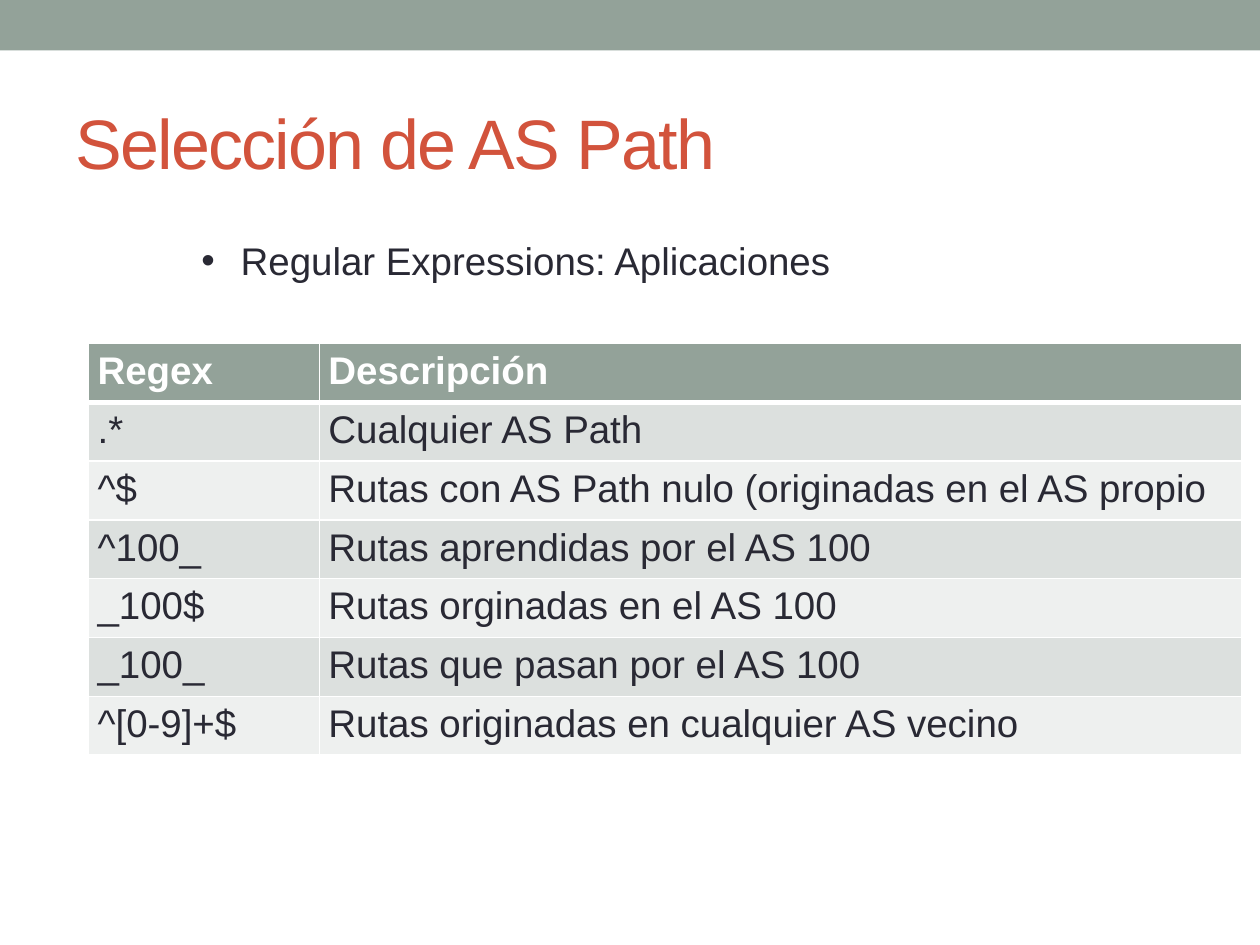
from dataclasses import dataclass

from lxml.etree import SubElement
from pptx import Presentation
from pptx.dml.color import RGBColor
from pptx.enum.shapes import MSO_SHAPE
from pptx.enum.text import MSO_ANCHOR
from pptx.oxml.ns import qn
from pptx.slide import Slide
from pptx.table import _Cell
from pptx.text.text import _Paragraph
from pptx.util import Pt

SAGE = RGBColor(0x93, 0xA2, 0x99)
BRICK = RGBColor(0xD2, 0x53, 0x3C)
INK = RGBColor(0x29, 0x29, 0x34)
WHITE = RGBColor(0xFF, 0xFF, 0xFF)
BANDS = (RGBColor(0xDC, 0xE0, 0xDE), RGBColor(0xEE, 0xF0, 0xEF))
FONT = "Arial"
BODY_SIZE = 22
COLUMN_WIDTHS = (131.9, 526.9)
ROW_HEIGHT = 33.6


@dataclass(frozen=True)
class Box:
    left: float
    top: float
    width: float
    height: float

    def lengths(self) -> tuple[Pt, Pt, Pt, Pt]:
        return Pt(self.left), Pt(self.top), Pt(self.width), Pt(self.height)


@dataclass(frozen=True)
class Rule:
    regex: str
    description: str


HEADER = Rule("Regex", "Descripción")
RULES = (
    Rule(".*", "Cualquier AS Path"),
    Rule("^$", "Rutas con AS Path nulo (originadas en el AS propio"),
    Rule("^100_", "Rutas aprendidas por el AS 100"),
    Rule("_100$", "Rutas orginadas en el AS 100"),
    Rule("_100_", "Rutas que pasan por el AS 100"),
    Rule("^[0-9]+$", "Rutas originadas en cualquier AS vecino"),
)


def style_paragraph(para: _Paragraph, size: float, color: RGBColor, bold: bool = False) -> None:
    for span in para.runs:
        span.font.name = FONT
        span.font.size = Pt(size)
        span.font.bold = bold
        span.font.color.rgb = color


def add_text(page: Slide, box: Box, text: str, size: float, color: RGBColor,
             anchor: MSO_ANCHOR = MSO_ANCHOR.TOP) -> _Paragraph:
    frame = page.shapes.add_textbox(*box.lengths()).text_frame
    frame.word_wrap = True
    frame.vertical_anchor = anchor
    frame.text = text
    para = frame.paragraphs[0]
    style_paragraph(para, size, color)
    return para


def add_bullet(para: _Paragraph, indent: float) -> None:
    properties = para._p.get_or_add_pPr()
    properties.set("marL", str(Pt(indent)))
    properties.set("indent", str(-Pt(indent)))
    SubElement(properties, qn("a:buFont"), typeface=FONT)
    SubElement(properties, qn("a:buChar"), char="•")


def add_border(cell: _Cell, side: str, width: float) -> None:
    line = SubElement(cell._tc.get_or_add_tcPr(), qn(f"a:ln{side}"), w=str(Pt(width)))
    fill = SubElement(line, qn("a:solidFill"))
    SubElement(fill, qn("a:srgbClr"), val=str(WHITE))


def fill_cell(cell: _Cell, text: str, row: int) -> None:
    is_header = row == 0
    for side in "LRTB":
        thick = (is_header and side == "B") or (row == 1 and side == "T")
        add_border(cell, side, 3 if thick else 1)
    cell.fill.solid()
    cell.fill.fore_color.rgb = SAGE if is_header else BANDS[(row - 1) % 2]
    cell.margin_left = cell.margin_right = Pt(5.2)
    cell.margin_top = cell.margin_bottom = Pt(3.6)
    cell.text_frame.text = text
    style_paragraph(cell.text_frame.paragraphs[0], BODY_SIZE,
                    WHITE if is_header else INK, is_header)


def add_rule_table(page: Slide, left: float, top: float) -> None:
    rules = (HEADER, *RULES)
    box = Box(left, top, sum(COLUMN_WIDTHS), ROW_HEIGHT * len(rules))
    table = page.shapes.add_table(len(rules), len(COLUMN_WIDTHS), *box.lengths()).table
    for column, width in zip(table.columns, COLUMN_WIDTHS):
        column.width = Pt(width)
    for index, rule in enumerate(rules):
        table.rows[index].height = Pt(ROW_HEIGHT)
        for column_index, text in enumerate((rule.regex, rule.description)):
            fill_cell(table.cell(index, column_index), text, index)


def add_band(page: Slide, box: Box) -> None:
    band = page.shapes.add_shape(MSO_SHAPE.RECTANGLE, *box.lengths())
    band.shadow.inherit = False
    band.fill.solid()
    band.fill.fore_color.rgb = SAGE
    band.line.fill.background()


def main() -> None:
    deck = Presentation()
    deck.slide_width, deck.slide_height = Pt(720), Pt(540)
    page = deck.slides.add_slide(deck.slide_layouts[6])
    add_band(page, Box(0, 0, 720, 28.8))
    title = add_text(page, Box(36, 42, 648, 78), "Selección de AS Path", 40, BRICK,
                     MSO_ANCHOR.MIDDLE)
    title.runs[0].font._element.set("spc", "-100")
    subtitle = add_text(page, Box(108, 132, 496, 33.8),
                        "Regular Expressions: Aplicaciones", BODY_SIZE, INK)
    add_bullet(subtitle, 22.5)
    add_rule_table(page, 50.6, 196.2)
    deck.save("out.pptx")


if __name__ == "__main__":
    main()
